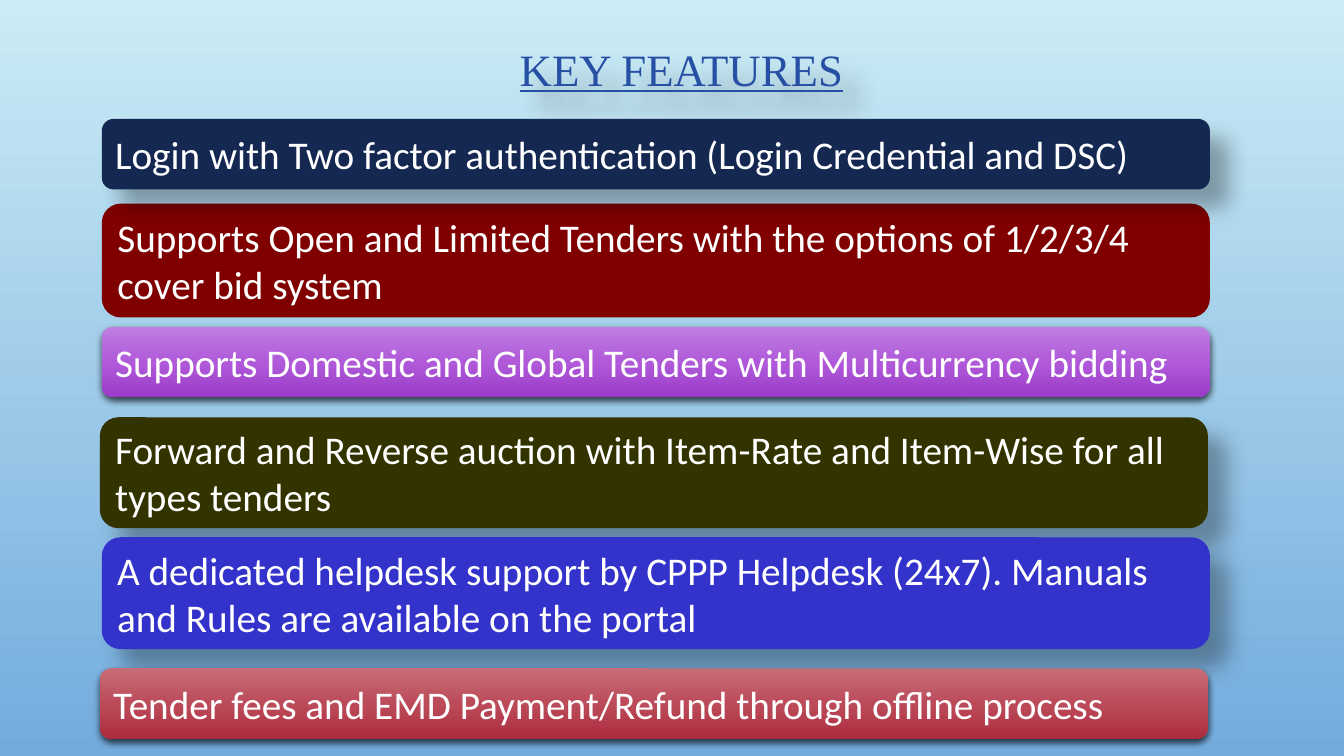
import copy

import lxml.etree
import pptx
import pptx.dml.color
import pptx.enum.shapes
import pptx.enum.text
import pptx.oxml.ns
import pptx.util

ALIGN = pptx.enum.text.PP_ALIGN
ANCHOR = pptx.enum.text.MSO_ANCHOR
SOFT = {"alpha": 30, "blur": 15, "dist": 18, "dir": 45}
TIGHT = {"alpha": 69, "blur": 5, "dist": 2, "dir": 90}
PURPLE = ["BF7EE0", "B05ADA", "9B3BC8"]
ROSE = ["C66D77", "BC4B5A", "AC2C3F"]
WIDTH = 109.9
PILLS = [
    (10.1, 20.2, 11.3, ["800000"], None,
     "Supports Open and Limited Tenders with the options of 1/2/3/4 cover bid system"),
    (10.1, 32.4, 7, PURPLE, TIGHT,
     "Supports Domestic and Global Tenders with Multicurrency bidding"),
    (9.9, 41.4, 11, ["333300"], SOFT,
     "Forward and Reverse auction with Item-Rate and Item-Wise for all types tenders"),
    (10.1, 11.8, 7, ["142852"], SOFT,
     "Login with Two factor authentication (Login Credential and DSC)"),
    (10.1, 53.3, 11.1, ["3333CC"], SOFT,
     "A dedicated helpdesk support by CPPP Helpdesk (24x7). "
     "Manuals and Rules are available on the portal"),
    (9.9, 66.3, 7, ROSE, TIGHT,
     "Tender fees and EMD Payment/Refund through offline process"),
]


def tint(code):
    return pptx.dml.color.RGBColor.from_string(code)


class Deck:
    """Draws styled elements on a slide with a grid of tenths of an inch."""

    cell = pptx.util.Inches(0.1)
    title_font = {"name": "Times New Roman", "size": pptx.util.Pt(32), "underline": True}
    pill_font = {"name": "Calibri", "size": pptx.util.Pt(28)}

    def __init__(self):
        self.show = pptx.Presentation()
        self.show.slide_width = pptx.util.Inches(13.33)
        self.show.slide_height = pptx.util.Inches(7.5)
        self.slide = self.show.slides.add_slide(self.show.slide_layouts[6])

    def grid(self, *cells):
        return [round(count * self.cell) for count in cells]

    def paint(self, owner, fill, codes):
        if len(codes) == 1:
            fill.solid()
            fill.fore_color.rgb = tint(codes[0])
            return
        fill.gradient()
        fill.gradient_angle = 270
        stops = owner.element.xpath(".//a:gsLst")[0]
        for _ in codes[2:]:
            stops.insert(1, copy.deepcopy(stops[0]))
        for rank, (stop, code) in enumerate(zip(fill.gradient_stops, codes)):
            stops[rank].set("pos", str(100000 * rank // (len(codes) - 1)))
            stop.color.rgb = tint(code)

    def shade(self, shape, look):
        shape.shadow.inherit = False
        if not look:
            return
        tag = pptx.oxml.ns.qn
        effects = shape.element.xpath("./p:spPr/a:effectLst")[0]
        outer = lxml.etree.SubElement(effects, tag("a:outerShdw"), {
            "blurRad": str(pptx.util.Pt(look["blur"])),
            "dist": str(pptx.util.Pt(look["dist"])),
            "dir": str(look["dir"] * 60000),
            "algn": "ctr",
            "rotWithShape": "0",
        })
        black = lxml.etree.SubElement(outer, tag("a:srgbClr"), {"val": "000000"})
        lxml.etree.SubElement(black, tag("a:alpha"), {"val": str(look["alpha"] * 1000)})

    def label(self, shape, text, font, code, align, anchor):
        frame = shape.text_frame
        frame.word_wrap = True
        frame.vertical_anchor = anchor
        line = frame.paragraphs[0]
        line.alignment = align
        run = line.add_run()
        run.text = text
        for key, value in font.items():
            setattr(run.font, key, value)
        run.font.color.rgb = tint(code)
        return line

    def title(self, text, *cells):
        box = self.slide.shapes.add_textbox(*self.grid(*cells))
        line = self.label(box, text, self.title_font, "274FA4", ALIGN.CENTER, ANCHOR.BOTTOM)
        line.line_spacing = 0.9
        self.shade(box, SOFT)

    def pill(self, left, top, height, codes, look, text):
        kind = pptx.enum.shapes.MSO_SHAPE.ROUNDED_RECTANGLE
        shape = self.slide.shapes.add_shape(kind, *self.grid(left, top, WIDTH, height))
        self.paint(shape, shape.fill, codes)
        shape.line.fill.background()
        self.shade(shape, look)
        self.label(shape, text, self.pill_font, "FFFFFF", ALIGN.LEFT, ANCHOR.MIDDLE)


def main():
    deck = Deck()
    deck.paint(deck.slide, deck.slide.background.fill, ["CBECF5", "73ABDD"])
    deck.title("KEY FEATURES", 22.6, 2.9, 90, 7.1)
    for pill in PILLS:
        deck.pill(*pill)
    deck.show.save("out.pptx")


if __name__ == "__main__":
    main()
